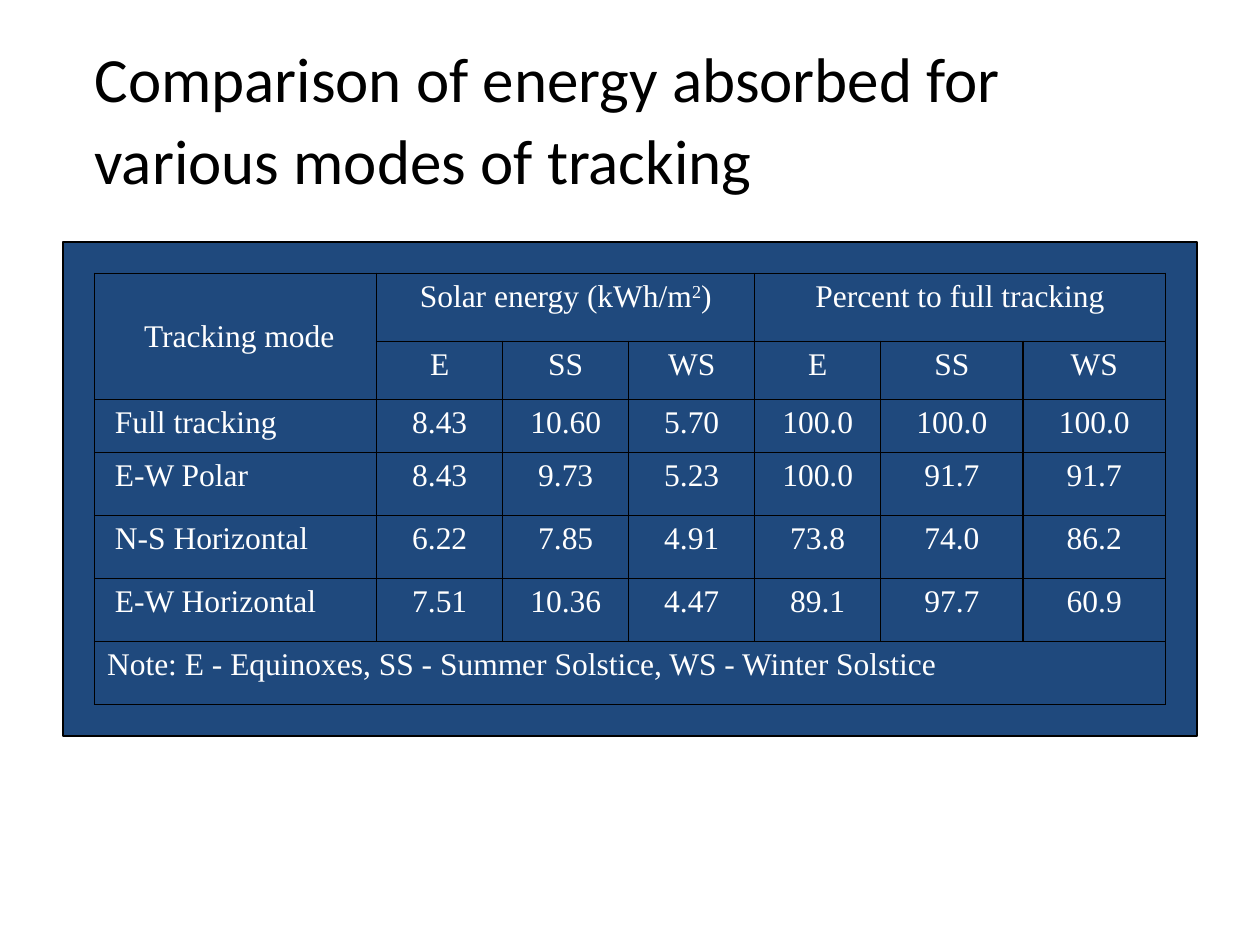
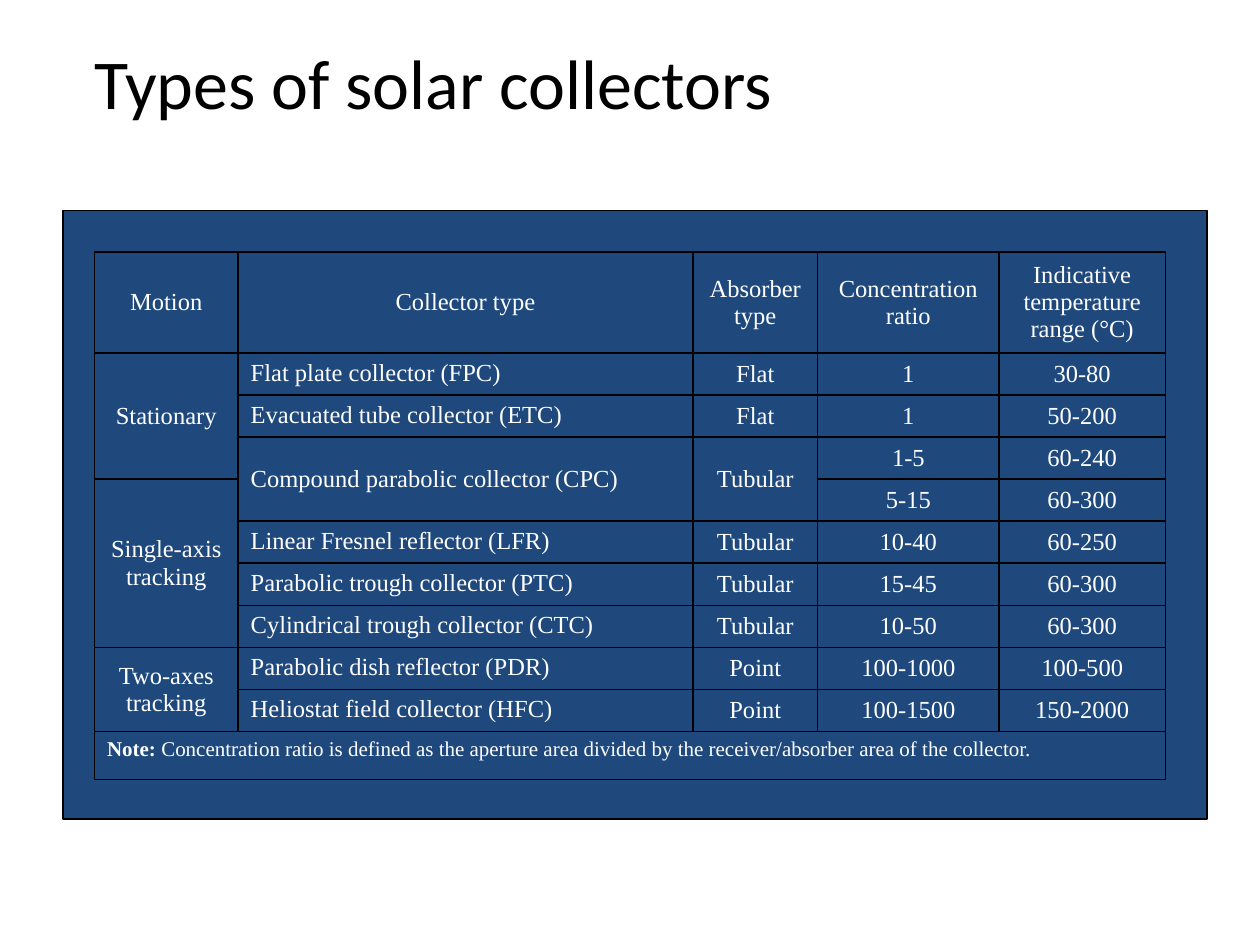
from lxml import etree
from pptx import Presentation
from pptx.dml.color import RGBColor
from pptx.enum.shapes import MSO_SHAPE
from pptx.enum.text import MSO_ANCHOR, PP_ALIGN
from pptx.oxml.ns import qn
from pptx.util import Inches, Pt

RECTANGLE = MSO_SHAPE.RECTANGLE
TOP, MIDDLE = MSO_ANCHOR.TOP, MSO_ANCHOR.MIDDLE
LEFT, CENTER = PP_ALIGN.LEFT, PP_ALIGN.CENTER

COLORS = {"panel": "1F497D", "line": "000000", "title": "000000", "cell": "FFFFFF"}
FONTS = {"title": "Calibri", "cell": "Times New Roman"}
BORDER_SIDES = ("a:lnL", "a:lnR", "a:lnT", "a:lnB")

TRACKING_ROWS = [
    [" Tracking mode",
     [("Solar energy (kWh/m", {}), ("2", {"baseline": 30000}), (")", {})], None, None,
     "Percent to full tracking", None, None],
    [None, "E", "SS", "WS", "E", "SS", "WS"],
    [" Full tracking", "8.43", "10.60", "5.70", "100.0", "100.0", "100.0"],
    [" E-W Polar", "8.43", "9.73", "5.23", "100.0", "91.7", "91.7"],
    [" N-S Horizontal", "6.22", "7.85", "4.91", "73.8", "74.0", "86.2"],
    [" E-W Horizontal", "7.51", "10.36", "4.47", "89.1", "97.7", "60.9"],
    ["Note: E - Equinoxes, SS - Summer Solstice, WS - Winter Solstice"] + [None] * 6,
]

COLLECTOR_ROWS = [
    ["Motion", "Collector type", "Absorber type", "Concentration ratio",
     "Indicative temperature range (°C)"],
    ["Stationary", "Flat plate collector (FPC)", "Flat", "1", "30-80"],
    [None, "Evacuated tube collector (ETC)", "Flat", "1", "50-200"],
    [None, "Compound parabolic collector (CPC)", "Tubular", "1-5", "60-240"],
    ["Single-axis tracking", None, None, "5-15", "60-300"],
    [None, "Linear Fresnel reflector (LFR)", "Tubular", "10-40", "60-250"],
    [None, "Parabolic trough collector (PTC)", "Tubular", "15-45", "60-300"],
    [None, "Cylindrical trough collector (CTC)", "Tubular", "10-50", "60-300"],
    ["Two-axes tracking", "Parabolic dish reflector (PDR)", "Point", "100-1000", "100-500"],
    [None, "Heliostat field collector (HFC)", "Point", "100-1500", "150-2000"],
    [[("Note:", {"size": Pt(12), "bold": True}),
      (" Concentration ratio is defined as the aperture area divided by "
       "the receiver/absorber area of the collector.", {"size": Pt(12)})]] + [None] * 4,
]
COMPOUND_ROW = 3
COLLECTOR_NOTE_ROW = len(COLLECTOR_ROWS) - 1


def rgb(name):
    return RGBColor.from_string(COLORS[name])


class SlideBuilder:
    def __init__(self, deck):
        self.deck = deck
        self.slide = None

    def new_slide(self):
        self.slide = self.deck.slides.add_slide(self.deck.slide_layouts[6])

    def add_spans(self, para, spans, role, size):
        """Fill a paragraph with a string, or with (text, format) pairs."""
        if isinstance(spans, str):
            spans = [(spans, {})]
        for text, changes in spans:
            span = para.add_run()
            span.text = text
            span.font.color.rgb = rgb(role)
            values = {"name": FONTS[role], "size": Pt(size), **changes}
            baseline = values.pop("baseline", None)
            for key, value in values.items():
                setattr(span.font, key, value)
            if baseline:
                span._r.get_or_add_rPr().set("baseline", str(baseline))

    def title(self, spans, size):
        box = self.slide.shapes.add_textbox(
            Inches(0.75), Inches(0.31), Inches(8.5), Inches(1.25))
        frame = box.text_frame
        frame.word_wrap = True
        for side in ("left", "top", "right", "bottom"):
            setattr(frame, f"margin_{side}", 0)
        self.add_spans(frame.paragraphs[0], spans, "title", size)

    def panel(self, top, width, height):
        panel = self.slide.shapes.add_shape(
            RECTANGLE, Inches(0.5), Inches(top), Inches(width), Inches(height))
        panel.shadow.inherit = False
        panel.fill.solid()
        panel.fill.fore_color.rgb = rgb("panel")
        panel.line.color.rgb = rgb("line")
        panel.line.width = Pt(1)

    def border(self, cell):
        properties = cell._tc.get_or_add_tcPr()
        for position, side in enumerate(BORDER_SIDES):
            line = etree.Element(qn(side), w=str(Pt(1)))
            fill = etree.SubElement(line, qn("a:solidFill"))
            etree.SubElement(fill, qn("a:srgbClr"), val=COLORS["line"])
            properties.insert(position, line)

    def table(self, top, rows, widths, heights, size, merges, placement):
        """merges holds (row, column, rows, columns); placement(row, column)
        gives a cell's alignment and anchor."""
        frame = self.slide.shapes.add_table(
            len(rows), len(widths), Inches(0.75), Inches(top),
            Inches(sum(widths)), Inches(sum(heights)))
        table = frame.table
        table.first_row = table.horz_banding = False
        for column, width in zip(table.columns, widths):
            column.width = Inches(width)
        for row, height in zip(table.rows, heights):
            row.height = Inches(height)
        for row, column, down, across in merges:
            table.cell(row, column).merge(table.cell(row + down - 1, column + across - 1))
        for row, texts in enumerate(rows):
            for column, text in enumerate(texts):
                cell = table.cell(row, column)
                cell.fill.background()
                self.border(cell)
                if text is None:
                    continue
                para = cell.text_frame.paragraphs[0]
                para.alignment, cell.vertical_anchor = placement(row, column)
                self.add_spans(para, text, "cell", size)


def tracking_placement(row, column):
    align = LEFT if column == 0 and row > 0 else CENTER
    return align, MIDDLE if row == column == 0 else TOP


def collector_placement(row, column):
    if row == COLLECTOR_NOTE_ROW:
        return LEFT, TOP
    if column == 1 and row > 0:
        return LEFT, MIDDLE if row == COMPOUND_ROW else TOP
    return CENTER, MIDDLE


def tracking_slide(builder):
    builder.new_slide()
    builder.panel(1.92, 9, 3.92)
    builder.title([("Comparison of energy absorbed for various modes of tracking", {}),
                   (" ", {"size": Pt(40)})], 36)
    builder.table(
        2.17, TRACKING_ROWS, [2.24] + [1] * 4 + [1.13] * 2,
        [0.54, 0.46, 0.42] + [0.5] * 4, 18,
        [(0, 0, 2, 1), (0, 1, 1, 3), (0, 4, 1, 3), (6, 0, 1, 7)], tracking_placement)


def collector_slide(builder):
    builder.new_slide()
    builder.panel(1.67, 9.08, 4.83)
    builder.title("Types of solar collectors", 40)
    builder.table(
        2, COLLECTOR_ROWS, [1.14, 3.61, 0.99, 1.44, 1.32],
        [0.8] + [0.33] * 9 + [0.38], 14,
        [(1, 0, 3, 1), (COMPOUND_ROW, 1, 2, 1), (COMPOUND_ROW, 2, 2, 1),
         (4, 0, 4, 1), (8, 0, 2, 1), (COLLECTOR_NOTE_ROW, 0, 1, 5)],
        collector_placement)


def main():
    deck = Presentation()
    deck.slide_width, deck.slide_height = Inches(10), Inches(7.5)
    builder = SlideBuilder(deck)
    tracking_slide(builder)
    collector_slide(builder)
    deck.save("out.pptx")


if __name__ == "__main__":
    main()
